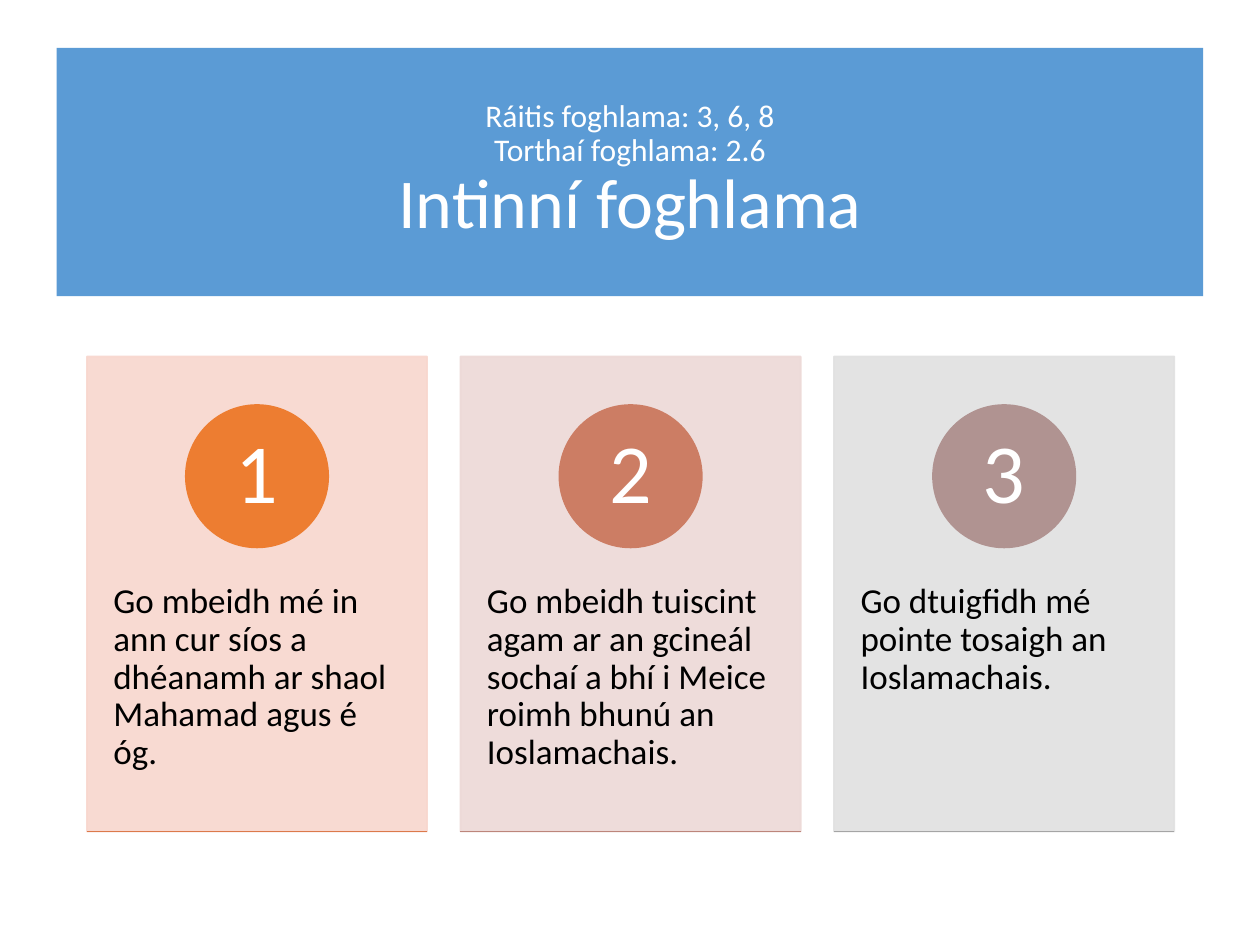
import pptx
import pptx.dml.color
import pptx.enum.shapes
import pptx.enum.text
import pptx.oxml
import pptx.oxml.ns
import pptx.util

W, H = 10, 7.5
FONT = "Calibri"
WHITE, BLACK = "FFFFFF", "000000"
SHAPE = pptx.enum.shapes.MSO_SHAPE
ALIGN = pptx.enum.text.PP_ALIGN
ANCHOR = pptx.enum.text.MSO_ANCHOR

CARD_LEFT, CARD_TOP, CARD_W, CARD_H = 0.69, 2.83, 2.7, 3.77
COLUMN_STEP = 2.965
CIRCLE, NUMBER_BOX = 1.13, 0.8

# card fill, circle fill, base line, text
CARDS = [
    ("F8D7CE", "ED7D31", "DC7A4B",
     "Go mbeidh mé in ann cur síos a dhéanamh ar shaol Mahamad agus é óg."),
    ("EDD9D7", "CC7D64", "BD867B",
     "Go mbeidh tuiscint agam ar an gcineál sochaí a bhí i Meice roimh bhunú an Ioslamachais."),
    ("E1E1E1", "B09391", "A5A5A5",
     "Go dtuigfidh mé pointe tosaigh an Ioslamachais."),
]


def inches(*values):
    return [pptx.util.Inches(v) for v in values]


def rgb(value):
    return pptx.dml.color.RGBColor.from_string(value)


def set_alpha(fill_parent, percent):
    """Make the solid fill under an spPr or a:ln element partly transparent."""
    color = fill_parent.find(pptx.oxml.ns.qn("a:solidFill"))[0]
    alpha = pptx.oxml.parse_xml(
        f'<a:alpha {pptx.oxml.ns.nsdecls("a")} val="{percent * 1000}"/>')
    color.append(alpha)


def add_block(s, kind, box, color, outlined=True, alpha=100):
    sp = s.shapes.add_shape(kind, *inches(*box))
    sp.shadow.inherit = False
    sp.fill.solid()
    sp.fill.fore_color.rgb = rgb(color)
    if outlined:
        sp.line.color.rgb = rgb(color)
        sp.line.width = pptx.util.Pt(1)
    else:
        sp.line.fill.background()
    if alpha < 100:
        props = sp.fill._xPr
        set_alpha(props, alpha)
        set_alpha(props.find(pptx.oxml.ns.qn("a:ln")), alpha)


def add_rule(s, left, top, width, color):
    line = s.shapes.add_connector(
        pptx.enum.shapes.MSO_CONNECTOR.STRAIGHT,
        *inches(left, top, left + width, top))
    line.line.color.rgb = rgb(color)
    line.line.width = pptx.util.Pt(1)
    props = line._element.spPr
    props.append(pptx.oxml.parse_xml(
        f'<a:effectLst {pptx.oxml.ns.nsdecls("a")}/>'))


def add_text(s, box, runs, color, align=ALIGN.LEFT, anchor=ANCHOR.TOP,
             insets=(0.1, 0.05)):
    """Write one paragraph of (text, size) runs, with a line break between runs."""
    tf = s.shapes.add_textbox(*inches(*box)).text_frame
    tf.word_wrap = True
    tf.vertical_anchor = anchor
    tf.margin_left, tf.margin_top = inches(*insets)
    tf.margin_right, tf.margin_bottom = inches(*insets)
    p = tf.paragraphs[0]
    p.alignment = align
    p.line_spacing = 0.9
    for i, (text, size) in enumerate(runs):
        if i:
            p.add_line_break()
        r = p.add_run()
        r.text = text
        r.font.name = FONT
        r.font.size = pptx.util.Pt(size)
        r.font.color.rgb = rgb(color)


def add_title(s):
    add_block(s, SHAPE.RECTANGLE, (0.45, 0.38, W - 2 * 0.45, 1.97), "5B9BD5",
              outlined=False)
    add_text(s, (CARD_LEFT, 0.64, W - 2 * CARD_LEFT, 1.45),
             [("Ráitis foghlama: 3, 6, 8", 18),
              ("Torthaí foghlama: 2.6", 18),
              ("Intinní foghlama", 40)],
             WHITE, ALIGN.CENTER, ANCHOR.MIDDLE)


def add_card(s, column, fill, accent, rule, text):
    left = CARD_LEFT + column * COLUMN_STEP
    center_x, center_y = left + CARD_W / 2, 3.78

    def centered(size):
        return center_x - size / 2, center_y - size / 2, size, size

    add_block(s, SHAPE.RECTANGLE, (left, CARD_TOP, CARD_W, CARD_H), fill, alpha=90)
    add_text(s, (left, 4.27, CARD_W, 2.26), [(text, 20)], BLACK,
             insets=(0.21, 0.36))
    add_block(s, SHAPE.OVAL, centered(CIRCLE), accent)
    add_text(s, centered(NUMBER_BOX), [(str(column + 1), 48)], WHITE,
             ALIGN.CENTER, ANCHOR.MIDDLE, (0.09, 0.01))
    add_rule(s, left, CARD_TOP + CARD_H, CARD_W, rule)


def main():
    prs = pptx.Presentation()
    prs.slide_width, prs.slide_height = inches(W, H)
    s = prs.slides.add_slide(prs.slide_layouts[6])
    add_title(s)
    for column, card in enumerate(CARDS):
        add_card(s, column, *card)
    prs.save("out.pptx")


if __name__ == "__main__":
    main()
